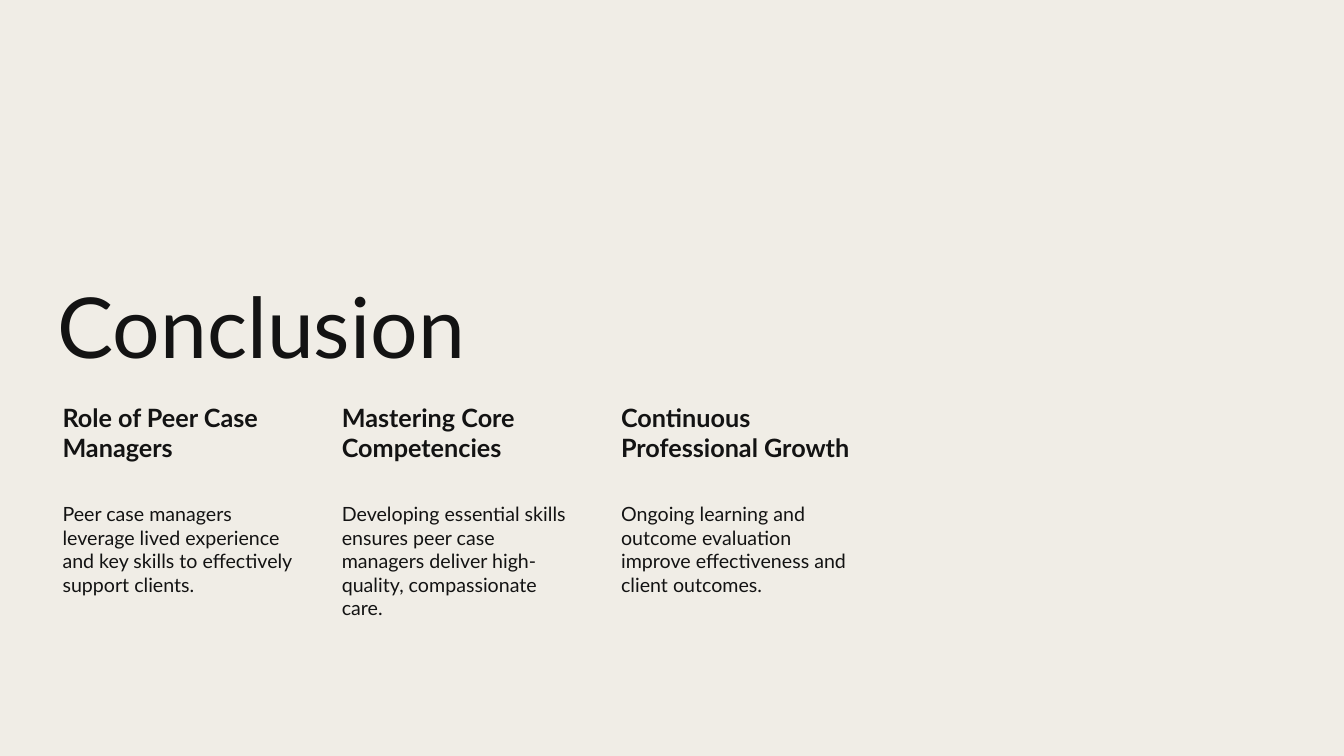
from dataclasses import dataclass

import pptx
import pptx.dml.color
import pptx.enum.text
import pptx.slide
import pptx.text.text
import pptx.util

INK = "131313"
PAPER = "F0EDE6"
FONT = "Lato"

# Grid, in inches
LEFT = 0.47
COLUMN_WIDTH = 2.52
COLUMN_STEP = 2.77
TITLE_TOP, TITLE_HEIGHT = 1.78, 2.01
HEADING_TOP, HEADING_HEIGHT = 3.96, 1.0
BODY_TOP, BODY_HEIGHT = HEADING_TOP + HEADING_HEIGHT, 1.44


@dataclass
class Takeaway:
    heading: str
    body: str


@dataclass
class TextStyle:
    size: int
    bold: bool = False
    insets: tuple[float, float, float, float] = (0.1, 0.05, 0.1, 0.05)
    line_spacing: float = 1.0
    anchor: pptx.enum.text.MSO_ANCHOR = pptx.enum.text.MSO_ANCHOR.TOP


TITLE = TextStyle(60, line_spacing=0.9, anchor=pptx.enum.text.MSO_ANCHOR.BOTTOM)
HEADING = TextStyle(18, bold=True, insets=(0.15, 0.03, 0.03, 0.03))
BODY = TextStyle(14, insets=(0.15, 0.02, 0.02, 0.02))

TAKEAWAYS = [
    Takeaway(
        "Role of Peer Case Managers",
        "Peer case managers leverage lived experience and key skills "
        "to effectively support clients.",
    ),
    Takeaway(
        "Mastering Core Competencies",
        "Developing essential skills ensures peer case managers deliver "
        "high-quality, compassionate care.",
    ),
    Takeaway(
        "Continuous Professional Growth",
        "Ongoing learning and outcome evaluation improve effectiveness "
        "and client outcomes.",
    ),
]


def colour(value: str) -> pptx.dml.color.RGBColor:
    return pptx.dml.color.RGBColor.from_string(value)


def add_text(page: pptx.slide.Slide, text: str, style: TextStyle,
             left: float, top: float, width: float, height: float) -> None:
    box = page.shapes.add_textbox(
        *(pptx.util.Inches(length) for length in (left, top, width, height)))
    frame = box.text_frame
    frame.word_wrap = True
    frame.vertical_anchor = style.anchor
    (frame.margin_left, frame.margin_top,
     frame.margin_right, frame.margin_bottom) = map(pptx.util.Inches, style.insets)
    frame.text = text
    para = frame.paragraphs[0]
    para.line_spacing = style.line_spacing
    for span in para.runs:
        span.font.name = FONT
        span.font.size = pptx.util.Pt(style.size)
        span.font.bold = style.bold
        span.font.color.rgb = colour(INK)


def main() -> None:
    deck = pptx.Presentation()
    deck.slide_width = pptx.util.Inches(13.33)
    deck.slide_height = pptx.util.Inches(7.5)
    page = deck.slides.add_slide(deck.slide_layouts[6])
    page.background.fill.solid()
    page.background.fill.fore_color.rgb = colour(PAPER)

    title_width = COLUMN_STEP * (len(TAKEAWAYS) - 1) + COLUMN_WIDTH
    add_text(page, "Conclusion", TITLE, LEFT, TITLE_TOP, title_width, TITLE_HEIGHT)
    for column, takeaway in enumerate(TAKEAWAYS):
        left = LEFT + column * COLUMN_STEP
        add_text(page, takeaway.heading, HEADING,
                 left, HEADING_TOP, COLUMN_WIDTH, HEADING_HEIGHT)
        add_text(page, takeaway.body, BODY,
                 left, BODY_TOP, COLUMN_WIDTH, BODY_HEIGHT)
    deck.save("out.pptx")


if __name__ == "__main__":
    main()
